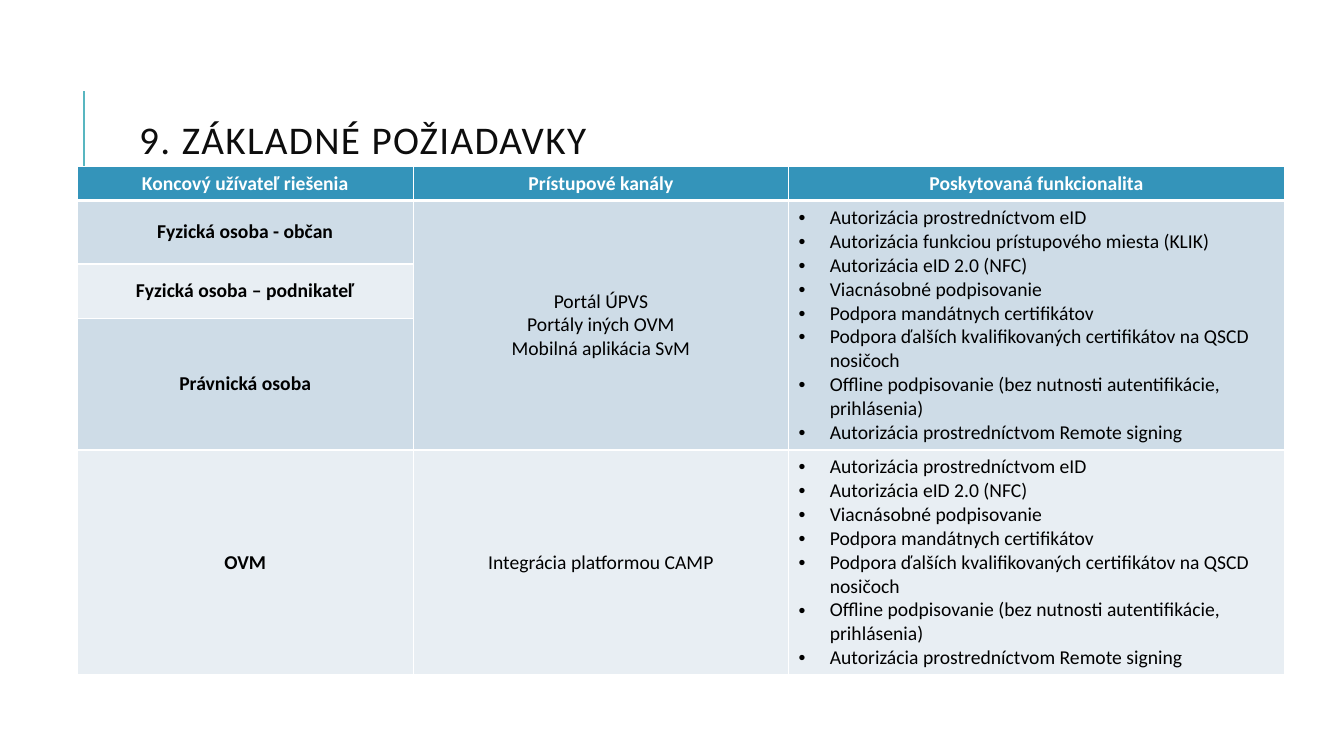
from lxml import etree
from pptx import Presentation
from pptx.dml.color import RGBColor
from pptx.enum.shapes import MSO_CONNECTOR
from pptx.enum.text import MSO_ANCHOR, PP_ALIGN
from pptx.oxml import parse_xml
from pptx.oxml.ns import nsdecls, qn
from pptx.util import Cm, Pt

COLORS = {
    "accent": "58B6C0",
    "title": "0D0D0D",
    "header": "3494BA",
    "dark band": "CEDCE7",
    "light band": "E8EEF3",
    "white": "FFFFFF",
    "black": "000000",
}
FONT = "Calibri"
INDENT = Cm(0.79)

FUNCTIONS = [
    "Autorizácia prostredníctvom eID",
    "Autorizácia funkciou prístupového miesta (KLIK)",
    "Autorizácia eID 2.0 (NFC)",
    "Viacnásobné podpisovanie",
    "Podpora mandátnych certifikátov",
    "Podpora ďalších kvalifikovaných certifikátov na QSCD nosičoch",
    "Offline podpisovanie (bez nutnosti autentifikácie, prihlásenia)",
    "Autorizácia prostredníctvom Remote signing",
]
OVM_FUNCTIONS = [name for name in FUNCTIONS if "KLIK" not in name]
CHANNELS = ["Portál ÚPVS", "Portály iných OVM", "Mobilná aplikácia SvM"]
ROWS = [
    [["Koncový užívateľ riešenia"], ["Prístupové kanály"], ["Poskytovaná funkcionalita"]],
    [["Fyzická osoba - občan"], CHANNELS, FUNCTIONS],
    [["Fyzická osoba – podnikateľ"], [], []],
    [["Právnická osoba"], [], []],
    [["OVM"], ["Integrácia platformou CAMP"], OVM_FUNCTIONS],
]
ROW_FILLS = ["header", "dark band", "light band", "dark band", "light band"]
COLUMN_WIDTHS = [8.48, 9.45, 12.5]
ROW_HEIGHTS = [0.85, 1.6, 1.37, 3.32, 5.67]


def rgb(name):
    return RGBColor.from_string(COLORS[name])


def set_borders(cell, widths):
    """Draw white cell borders; widths maps L, R, T and B to points."""
    for index, (side, width) in enumerate(widths.items()):
        cell._tc.get_or_add_tcPr().insert(index, parse_xml(
            f'<a:ln{side} {nsdecls("a")} w="{Pt(width)}"><a:solidFill>'
            f'<a:srgbClr val="{COLORS["white"]}"/></a:solidFill></a:ln{side}>'))


deck = Presentation()
deck.slide_width, deck.slide_height = Cm(33.87), Cm(19.05)
page = deck.slides.add_slide(deck.slide_layouts[6])

# Accent line and title
accent = page.shapes.add_connector(
    MSO_CONNECTOR.STRAIGHT, Cm(2.12), Cm(4.83), Cm(2.12), Cm(2.29))
accent.line.color.rgb = rgb("accent")
accent.line.width = Pt(1.5)
etree.SubElement(accent._element.spPr, qn("a:effectLst"))

title = page.shapes.add_textbox(Cm(3.51), Cm(2.57), Cm(25.4), Cm(2.08))
frame = title.text_frame
frame.word_wrap = True
frame.vertical_anchor = MSO_ANCHOR.MIDDLE
frame.margin_left = frame.margin_right = frame.margin_top = frame.margin_bottom = 0
frame.text = "9. ZÁKLADNÉ POŽIADAVKY"
para = frame.paragraphs[0]
para.line_spacing = 0.8
span = para.runs[0]
span.font.name, span.font.size = FONT, Pt(28)
span.font.color.rgb = rgb("title")
span.font._element.set("spc", "100")

# Requirements table
table = page.shapes.add_table(
    len(ROWS), len(COLUMN_WIDTHS), Cm(1.94), Cm(4.2),
    Cm(sum(COLUMN_WIDTHS)), Cm(sum(ROW_HEIGHTS))).table
for column, width in zip(table.columns, COLUMN_WIDTHS):
    column.width = Cm(width)
for row, height in zip(table.rows, ROW_HEIGHTS):
    row.height = Cm(height)

for row_index, (row, fill) in enumerate(zip(ROWS, ROW_FILLS)):
    is_header = row_index == 0
    for column_index, lines in enumerate(row):
        cell = table.cell(row_index, column_index)
        cell.fill.solid()
        cell.fill.fore_color.rgb = rgb(fill)
        set_borders(cell, {"L": 1, "R": 1, "T": 3 if row_index == 1 else 1,
                           "B": 3 if is_header else 1})
        cell.vertical_anchor = MSO_ANCHOR.MIDDLE
        cell.text_frame.text = "\n".join(lines)
        for para in cell.text_frame.paragraphs:
            if column_index == 2 and not is_header:
                properties = para._p.get_or_add_pPr()
                properties.set("marL", str(INDENT))
                properties.set("indent", str(-INDENT))
                etree.SubElement(properties, qn("a:buFont"), typeface="Arial")
                etree.SubElement(properties, qn("a:buChar"), char="•")
            else:
                para.alignment = PP_ALIGN.CENTER
            para.font.size = Pt(14)
            for span in para.runs:
                span.font.name, span.font.size = FONT, Pt(14)
                span.font.bold = is_header or column_index == 0
                span.font.color.rgb = rgb("white" if is_header else "black")

for column_index in (1, 2):
    table.cell(1, column_index).merge(table.cell(3, column_index))

deck.save("out.pptx")
